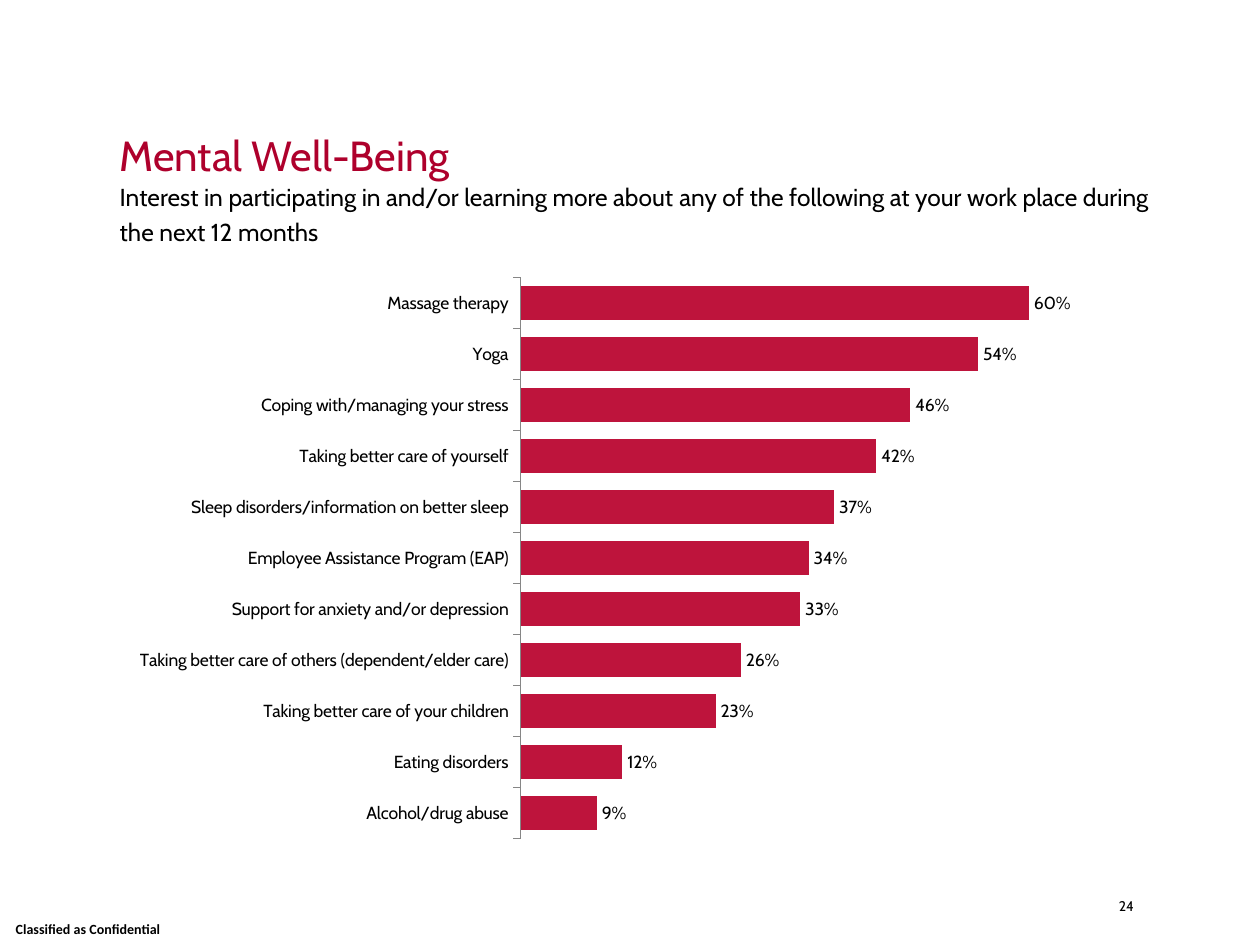
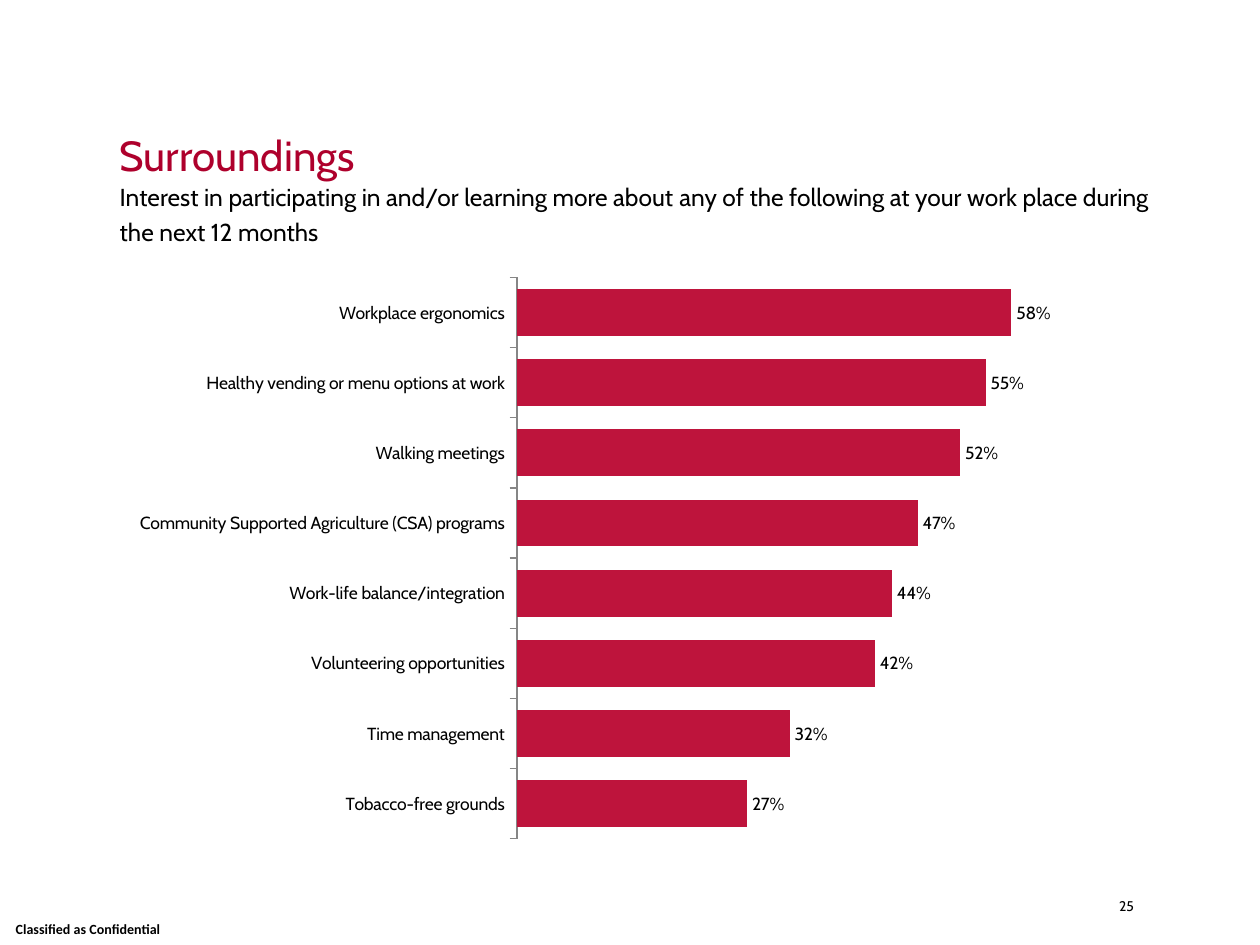
from pptx import Presentation
from pptx.chart.data import CategoryChartData
from pptx.dml.color import RGBColor
from pptx.enum import chart as charts, text
from pptx.util import Inches, Pt

COLORS = {"title": "AE002C", "bar": "BE143C", "text": "000000", "axis": "868686"}
FONT = "Cabin"
QUESTION = ("Interest in participating in and/or learning more about\u00a0any of the "
            "following at your work place during the next 12 months")

# Each slide: title, page number, shares from the bottom bar to the top one
SURVEY_PAGES = [
    ("Mental Well-Being", 24, {
        "Alcohol/drug abuse": 0.09,
        "Eating disorders": 0.12,
        "Taking better care of your children": 0.23,
        "Taking better care of others (dependent/elder care)": 0.26,
        "Support for anxiety and/or depression": 0.33,
        "Employee Assistance Program (EAP)": 0.34,
        "Sleep disorders/information on better sleep": 0.37,
        "Taking better care of yourself": 0.42,
        "Coping with/managing your stress": 0.46,
        "Yoga": 0.54,
        "Massage therapy": 0.6,
    }),
    ("Surroundings", 25, {
        "Tobacco-free grounds": 0.27,
        "Time management": 0.32,
        "Volunteering opportunities": 0.42,
        "Work-life balance/integration": 0.44,
        "Community Supported Agriculture (CSA) programs": 0.47,
        "Walking meetings": 0.52,
        "Healthy vending or menu options at work": 0.55,
        "Workplace ergonomics": 0.58,
    }),
]


def add_text(page, words, left, top, width, height, size, color="text", font=FONT,
             bold=False, align=text.PP_ALIGN.LEFT, anchor=text.MSO_ANCHOR.TOP, spacing=1.0):
    box = page.shapes.add_textbox(Inches(left), Inches(top), Inches(width), Inches(height))
    frame = box.text_frame
    frame.word_wrap = True
    frame.margin_left = frame.margin_right = frame.margin_top = frame.margin_bottom = 0
    frame.vertical_anchor = anchor
    frame.text = words
    paragraph = frame.paragraphs[0]
    paragraph.alignment = align
    paragraph.line_spacing = spacing
    span = paragraph.runs[0]
    span.font.name = font
    span.font.size = Pt(size)
    span.font.bold = bold
    span.font.color.rgb = RGBColor.from_string(COLORS[color])


def add_bar_chart(page, shares):
    data = CategoryChartData(number_format="0%")
    data.categories = list(shares)
    data.add_series("Series 1", list(shares.values()))
    chart = page.shapes.add_chart(charts.XL_CHART_TYPE.BAR_CLUSTERED, Inches(0.95),
                                  Inches(2.11), Inches(8.05), Inches(4.64), data).chart
    chart.has_legend = False
    chart.has_title = False
    chart.font.name = FONT
    chart.font.size = Pt(10)
    chart.font.color.rgb = RGBColor.from_string(COLORS["text"])

    # Axes: only the category line with its ticks shows
    category_axis = chart.category_axis
    category_axis.has_major_gridlines = False
    category_axis.major_tick_mark = charts.XL_TICK_MARK.OUTSIDE
    category_axis.format.line.color.rgb = RGBColor.from_string(COLORS["axis"])
    category_axis.format.line.width = Pt(0.75)
    value_axis = chart.value_axis
    value_axis.visible = False
    value_axis.has_major_gridlines = False
    value_axis.minimum_scale = 0
    value_axis.maximum_scale = 0.7

    # Bars and their labels
    plot = chart.plots[0]
    plot.gap_width = 50
    plot.vary_by_categories = False
    fill = plot.series[0].format.fill
    fill.solid()
    fill.fore_color.rgb = RGBColor.from_string(COLORS["bar"])
    plot.has_data_labels = True
    labels = plot.data_labels
    labels.show_value = True
    labels.number_format = "0%"
    labels.number_format_is_linked = False
    labels.position = charts.XL_LABEL_POSITION.OUTSIDE_END


deck = Presentation()
deck.slide_width = Inches(10)
deck.slide_height = Inches(7.5)

for title, number, shares in SURVEY_PAGES:
    page = deck.slides.add_slide(deck.slide_layouts[6])

    # Footer
    add_text(page, "Classified as Confidential", 0, 7.25, 1.4, 0.25, 8, font="Calibri",
             bold=True, align=text.PP_ALIGN.CENTER, anchor=text.MSO_ANCHOR.MIDDLE)
    add_text(page, str(number), 8.51, 7.12, 0.49, 0.38, 8, align=text.PP_ALIGN.RIGHT)

    # Title and survey question
    add_text(page, title, 0.95, 0.68, 8, 0.75, 24, color="title",
             anchor=text.MSO_ANCHOR.BOTTOM, spacing=0.9)
    add_text(page, QUESTION, 0.95, 1.4, 8.45, 0.3, 14, spacing=1.2)

    # Results
    add_bar_chart(page, shares)

deck.save("out.pptx")
